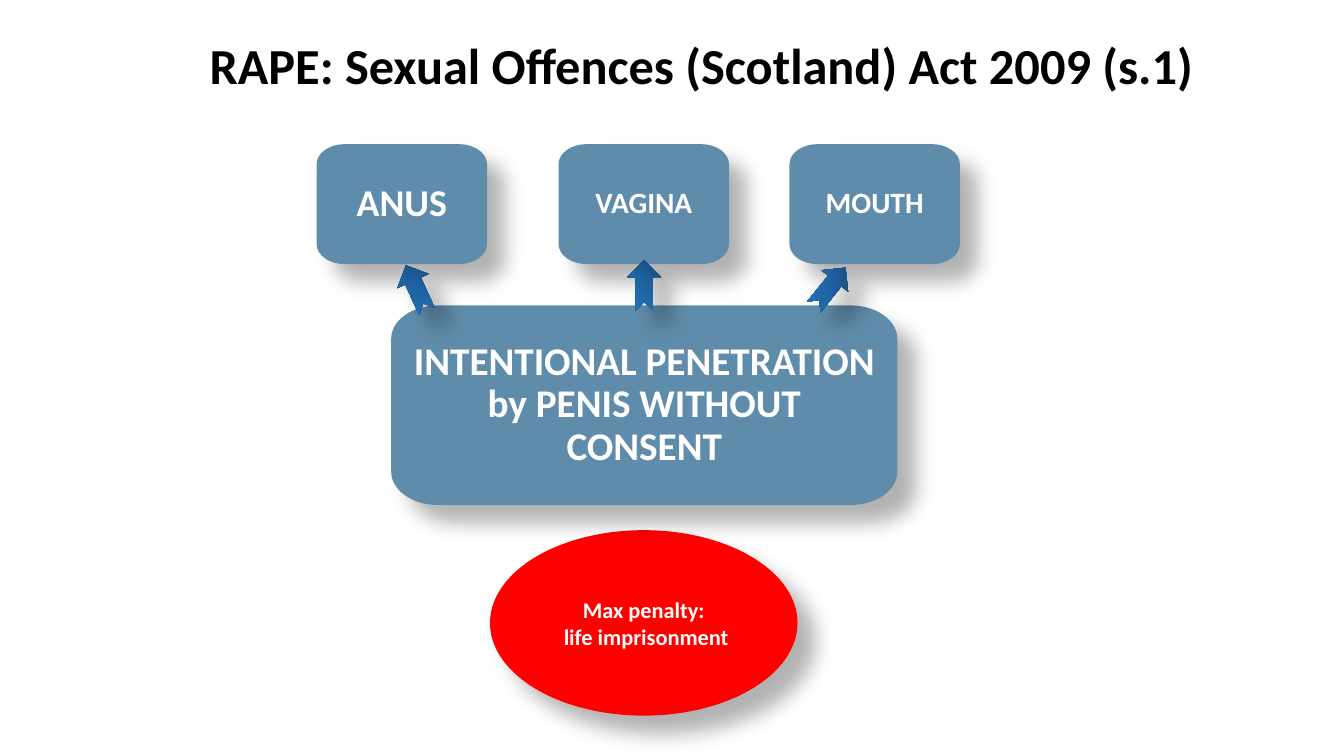
from lxml import etree
from pptx import Presentation
from pptx.dml.color import RGBColor
from pptx.enum.shapes import MSO_SHAPE as SHAPE
from pptx.enum.text import MSO_ANCHOR as ANCHOR, PP_ALIGN as ALIGN
from pptx.oxml import parse_xml
from pptx.oxml.ns import nsdecls, qn
from pptx.util import Pt

PX = 9144  # one hundredth of an inch
BLUE, RED, WHITE, BLACK = "608CAB", "FF0000", "FFFFFF", "000000"
ARROW_STOPS = [(0, "164672"), (50, "1F63A2"), (100, "2476C0")]
BEND = 0.55  # pull of a quarter ellipse towards its corner


def px(*sizes):
    return [round(size * PX) for size in sizes]


def color(code):
    return RGBColor.from_string(code)


def write(shape, *lines, size, tint=WHITE, pad=None, spacing=None,
          anchor=ANCHOR.MIDDLE):
    frame = shape.text_frame
    frame.word_wrap = True
    frame.vertical_anchor = anchor
    if pad is not None:
        frame.margin_left = frame.margin_right = pad * PX
        frame.margin_top = frame.margin_bottom = pad * PX
    for i, line in enumerate(lines):
        para = frame.add_paragraph() if i else frame.paragraphs[0]
        para.alignment = ALIGN.CENTER
        para.line_spacing = spacing
        run = para.add_run()
        run.text = line
        font = run.font
        font.name, font.size, font.bold = "Calibri", Pt(size), True
        font.color.rgb = color(tint)


def shade(shape):
    """Drop a soft shadow to the lower right and hide the outline."""
    shape.line.fill.background()
    shape.shadow.inherit = False
    effects = shape.element.spPr.find(qn("a:effectLst"))
    drop = etree.SubElement(
        effects, qn("a:outerShdw"), blurRad=str(Pt(15)), dist=str(Pt(18)),
        dir=str(45 * 60000), algn="tl", rotWithShape="0")
    tint = etree.SubElement(drop, qn("a:srgbClr"), val=BLACK)
    etree.SubElement(tint, qn("a:alpha"), val="30000")


def paint(shape, code):
    shape.fill.solid()
    shape.fill.fore_color.rgb = color(code)
    shade(shape)


def bend(line, start, corner):
    """Turn a straight cut across a corner into a curve."""
    end = line[0]
    stop = int(end.get("x")), int(end.get("y"))
    line.tag = qn("a:cubicBezTo")
    for point in (start, stop):
        x, y = [round(p + BEND * (c - p)) for p, c in zip(point, corner)]
        end.addprevious(etree.Element(qn("a:pt"), x=str(x), y=str(y)))


def add_box(slide, left, top, width, height, label, size, pad):
    """Draw a labelled box with elliptical corners."""
    x, y, wide, high = px(left, top, width, height)
    ry = round(high / 6)
    rx = round(1.4 * ry)
    points = [(0, ry), (rx, 0), (wide - rx, 0), (wide, ry),
              (wide, high - ry), (wide - rx, high), (rx, high),
              (0, high - ry)]
    outline = slide.shapes.build_freeform(*points[0], scale=1.0)
    outline.add_line_segments(points[1:], close=True)
    box = outline.convert_to_shape(x, y)
    cuts = list(box.element.spPr.iter(qn("a:lnTo")))[::2]
    corners = [(0, 0), (wide, 0), (wide, high), (0, high)]
    for cut, start, corner in zip(cuts, points[::2], corners):
        bend(cut, start, corner)
    paint(box, BLUE)
    write(box, label, size=size, pad=pad, spacing=0.9)


def add_arrow(slide, left, top, angle):
    arrow = slide.shapes.add_shape(SHAPE.NOTCHED_RIGHT_ARROW,
                                   *px(left, top, 50, 34))
    arrow.rotation = angle
    shade(arrow)
    stops = "".join(
        f'<a:gs pos="{spot * 1000}"><a:srgbClr val="{code}"/></a:gs>'
        for spot, code in ARROW_STOPS)
    blend = parse_xml(
        f'<a:gradFill {nsdecls("a")} rotWithShape="1"><a:gsLst>{stops}'
        f'</a:gsLst><a:lin ang="{225 * 60000}" scaled="1"/></a:gradFill>')
    arrow.element.spPr.find(qn("a:prstGeom")).addnext(blend)


def add_title(slide, label):
    title = slide.shapes.title
    title.left, title.top, title.width, title.height = px(159, 29, 1074, 71)
    write(title, label, size=36, tint=BLACK, anchor=ANCHOR.TOP)


def add_oval(slide, *lines):
    oval = slide.shapes.add_shape(SHAPE.OVAL, *px(486, 526, 305, 184))
    paint(oval, RED)
    write(oval, *lines, size=16)


def main():
    deck = Presentation()
    deck.slide_width, deck.slide_height = px(1333, 750)
    slide = deck.slides.add_slide(deck.slide_layouts[5])
    add_title(slide, "RAPE: Sexual Offences (Scotland) Act 2009 (s.1)")
    add_oval(slide, "Max penalty:", " life imprisonment")
    for left, label, size in [(554, "VAGINA", 21), (783, "MOUTH", 21),
                              (314, "ANUS", 27)]:
        add_box(slide, left, 143, 169, 119, label, size, 12)
    add_box(slide, 388, 303, 502, 198,
            "INTENTIONAL PENETRATION by PENIS WITHOUT CONSENT", 28, 17)
    for left, top, angle in [(388, 269, 245.6), (798, 268, 308.9),
                             (614, 266, 270)]:
        add_arrow(slide, left, top, angle)
    deck.save("out.pptx")


if __name__ == "__main__":
    main()
